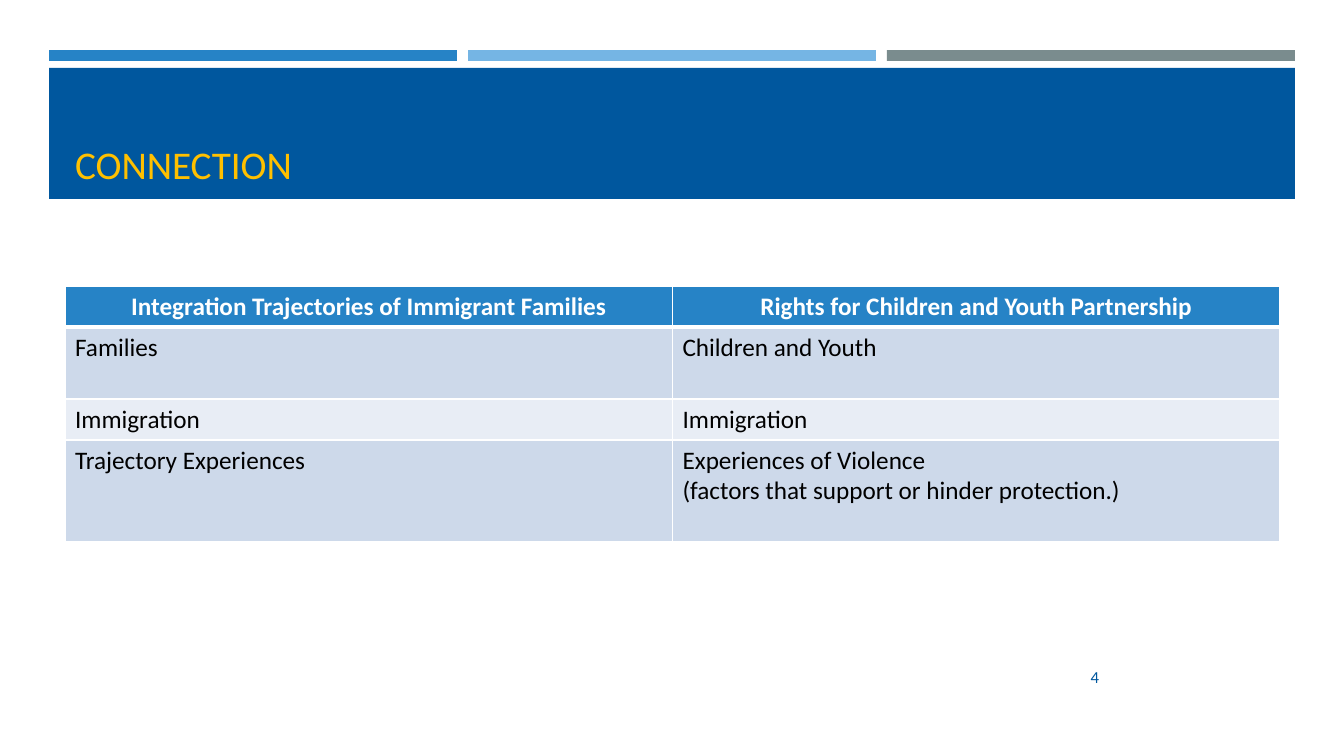
import pptx
import pptx.util
import pptx.dml.color
import pptx.enum.shapes
import pptx.enum.text
import pptx.oxml
import pptx.oxml.ns

RGB = pptx.dml.color.RGBColor
ALIGN = pptx.enum.text.PP_ALIGN
ANCHOR = pptx.enum.text.MSO_ANCHOR

SCALE = 12192000 / 1344
FONT = "Calibri"
WHITE = RGB(0xFF, 0xFF, 0xFF)
BLACK = RGB(0, 0, 0)
NAVY = RGB(0x00, 0x57, 0x9E)
BLUE = RGB(0x26, 0x83, 0xC6)
SKY = RGB(0x75, 0xB5, 0xE4)
GRAY = RGB(0x7A, 0x8C, 0x8E)
GOLD = RGB(0xFF, 0xC0, 0x00)
BAND_DARK = RGB(0xCD, 0xD9, 0xEA)
BAND_LIGHT = RGB(0xE8, 0xED, 0xF5)

ROWS = [
    ("Integration Trajectories of Immigrant Families",
     "Rights for Children and Youth Partnership"),
    ("Families", "Children and Youth"),
    ("Immigration", "Immigration"),
    ("Trajectory Experiences",
     "Experiences of Violence\n(factors that support or hinder protection.)"),
]
ROW_HEIGHTS = [41, 72, 41, 102]


def px(n):
    return pptx.util.Emu(round(n * SCALE))


def write(tf, text, size=18, color=BLACK, bold=False, align=ALIGN.LEFT):
    tf.word_wrap = True
    for i, line in enumerate(text.split("\n")):
        p = tf.paragraphs[0] if i == 0 else tf.add_paragraph()
        p.alignment = align
        r = p.add_run()
        r.text = line
        r.font.name = FONT
        r.font.size = pptx.util.Pt(size)
        r.font.bold = bold
        r.font.color.rgb = color


def add_bar(s, x, y, w, h, color):
    sp = s.shapes.add_shape(pptx.enum.shapes.MSO_SHAPE.RECTANGLE, px(x), px(y), px(w), px(h))
    sp.shadow.inherit = False
    sp.fill.solid()
    sp.fill.fore_color.rgb = color
    sp.line.fill.background()


def add_title(s, text, x, y, w, h):
    sp = s.shapes.title
    sp.left, sp.top, sp.width, sp.height = px(x), px(y), px(w), px(h)
    sp.text_frame.vertical_anchor = ANCHOR.BOTTOM
    write(sp.text_frame, text, size=28, color=GOLD)


def add_number(s, text, x, y, w, h):
    tf = s.shapes.add_textbox(px(x), px(y), px(w), px(h)).text_frame
    tf.vertical_anchor = ANCHOR.MIDDLE
    write(tf, text, size=12, color=NAVY, align=ALIGN.RIGHT)


def set_borders(cell, **points):
    tcPr = cell._tc.get_or_add_tcPr()
    for i, (side, pt) in enumerate(points.items()):
        ln = pptx.oxml.parse_xml(
            f'<a:ln{side} {pptx.oxml.ns.nsdecls("a")} w="{pptx.util.Pt(pt)}">'
            f'<a:solidFill><a:srgbClr val="{WHITE}"/></a:solidFill></a:ln{side}>')
        tcPr.insert(i, ln)


def add_comparison(s, x, y, w):
    tbl = s.shapes.add_table(len(ROWS), 2, px(x), px(y), px(w), px(sum(ROW_HEIGHTS))).table
    for i, texts in enumerate(ROWS):
        tbl.rows[i].height = px(ROW_HEIGHTS[i])
        for j, text in enumerate(texts):
            cell = tbl.cell(i, j)
            cell.fill.solid()
            if i == 0:
                cell.fill.fore_color.rgb = BLUE
                write(cell.text_frame, text, color=WHITE, bold=True, align=ALIGN.CENTER)
            else:
                cell.fill.fore_color.rgb = BAND_DARK if i % 2 else BAND_LIGHT
                write(cell.text_frame, text)
            set_borders(cell, L=1, R=1, T=3 if i == 1 else 1, B=3 if i == 0 else 1)


def main():
    prs = pptx.Presentation()
    prs.slide_width, prs.slide_height = px(1344), px(756)
    s = prs.slides.add_slide(prs.slide_layouts[5])
    for i, color in enumerate([BLUE, SKY, GRAY]):
        add_bar(s, 49 + 419 * i, 50, 408, 11, color)
    add_bar(s, 49, 68, 1246, 131, NAVY)
    title = s.shapes.title._element
    title.getparent().append(title)
    add_title(s, "CONNECTION", 65, 78, 1215, 114)
    add_comparison(s, 65, 286, 1215)
    add_number(s, "4", 993, 657, 116, 40)
    prs.save("out.pptx")


if __name__ == "__main__":
    main()
